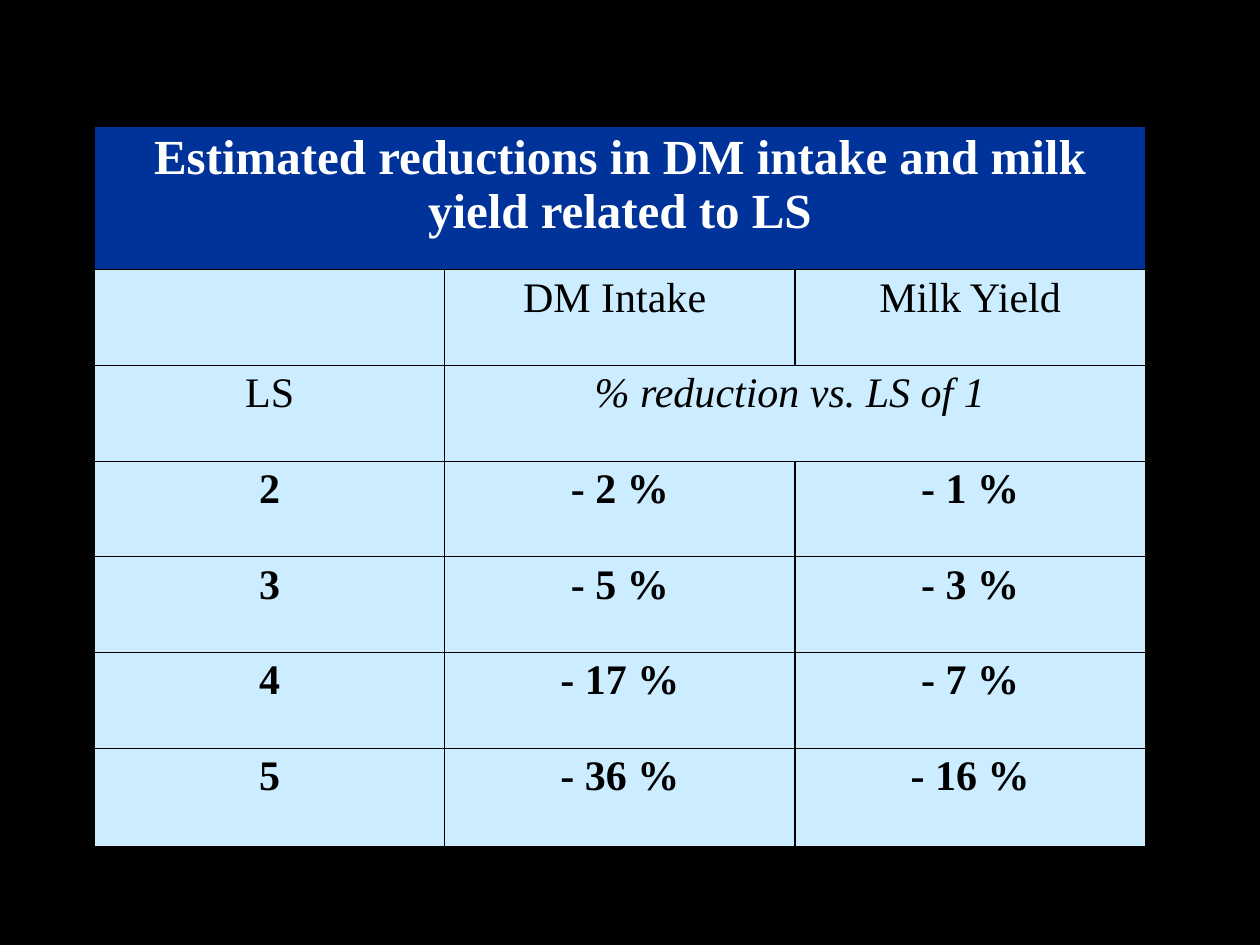
from lxml import etree
from pptx import Presentation
from pptx.dml.color import RGBColor
from pptx.enum.text import PP_ALIGN
from pptx.oxml.ns import qn
from pptx.util import Inches, Pt

CENTER = PP_ALIGN.CENTER
FONT = "Times New Roman"
BLACK, WHITE, NAVY, PALE = "000000", "FFFFFF", "003399", "CCECFF"
WIDE, HIGH = 10, 7.5
COL = 2.78
ROWS = [1.14] + [0.76] * 5 + [0.78]
TITLE = "Estimated reductions in DM intake and milk yield related to LS"
HEAD = [
    [TITLE, "", ""],
    ["", "DM Intake ", "Milk Yield"],
    ["LS", "% reduction vs. LS of 1 ", ""],
]
DATA = [(2, 2, 1), (3, 5, 3), (4, 17, 7), (5, 36, 16)]


def paint(fill, color):
    """Set a solid fill from a hex string."""
    fill.solid()
    fill.fore_color.rgb = RGBColor.from_string(color)


def edge(cell):
    """Draw a thin black line on each side of a cell."""
    props = cell._tc.get_or_add_tcPr()
    for side in "LRTB":
        line = etree.SubElement(props, qn(f"a:ln{side}"), w=str(Pt(0.75)))
        fill = etree.SubElement(line, qn("a:solidFill"))
        etree.SubElement(fill, qn("a:srgbClr"), val=BLACK)


def write(cell, text, size, color, bold, italic):
    """Put centred, formatted text in a cell."""
    cell.text_frame.text = text
    para = cell.text_frame.paragraphs[0]
    para.alignment = CENTER
    for run in para.runs:
        font = run.font
        font.name, font.size = FONT, Pt(size)
        font.bold, font.italic = bold, italic
        font.color.rgb = RGBColor.from_string(color)


def style(cell, row, text):
    """Give a cell its margins, lines, fill and text by its row."""
    cell.margin_left = cell.margin_right = Inches(0.04)
    cell.margin_top = cell.margin_bottom = Inches(0.04)
    edge(cell)
    title = row == 0
    paint(cell.fill, NAVY if title else PALE)
    if text:
        write(cell, text, 28 if title else 24, WHITE if title else BLACK,
              title or row >= len(HEAD), text.startswith("% "))


def add_grid(slide, rows):
    """Add the table with its merged title and unit cells."""
    frame = slide.shapes.add_table(
        len(rows), 3, Inches(0.075 * WIDE), Inches(HIGH / 7.5),
        Inches(3 * COL), Inches(sum(ROWS)))
    table = frame.table
    for col in table.columns:
        col.width = Inches(COL)
    for row, high in zip(table.rows, ROWS):
        row.height = Inches(high)
    for r, texts in enumerate(rows):
        for c, text in enumerate(texts):
            style(table.cell(r, c), r, text)
    table.cell(0, 0).merge(table.cell(0, 2))
    table.cell(2, 1).merge(table.cell(2, 2))


def main():
    """Build and save the slide."""
    deck = Presentation()
    deck.slide_width, deck.slide_height = Inches(WIDE), Inches(HIGH)
    slide = deck.slides.add_slide(deck.slide_layouts[6])
    paint(slide.background.fill, BLACK)
    body = [[str(score), f"- {feed} %", f"- {milk} %"]
            for score, feed, milk in DATA]
    add_grid(slide, HEAD + body)
    deck.save("out.pptx")


if __name__ == "__main__":
    main()
